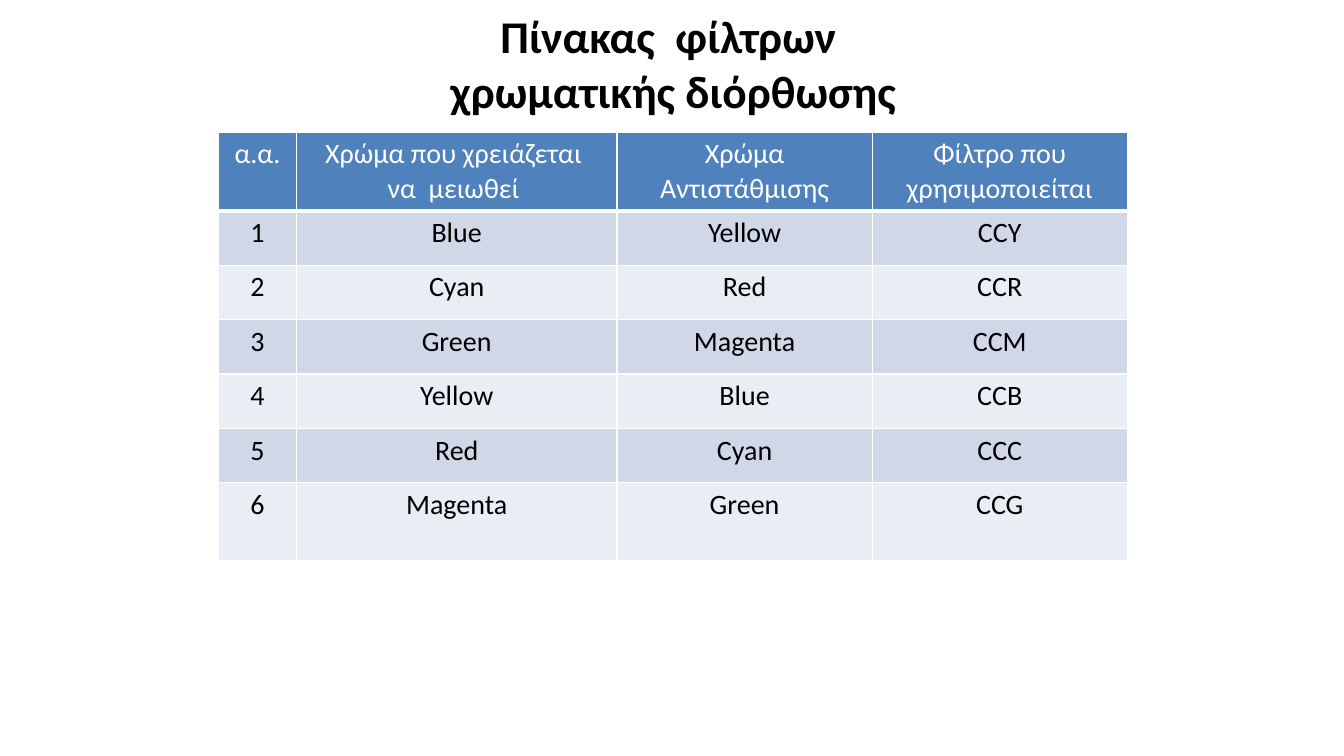
"""Build a slide with a table of colour correction filters."""
from copy import deepcopy

from pptx import Presentation
from pptx.dml.color import RGBColor as RGB
from pptx.enum.text import MSO_ANCHOR as Anchor, PP_ALIGN as Align
from pptx.oxml import parse_xml
from pptx.oxml.ns import nsdecls, qn
from pptx.util import Cm, Pt

COLORS = {"header": "4F81BD", "odd": "D0D8E8", "even": "E9EDF4",
          "white": "FFFFFF", "black": "000000"}
ROWS = [
    ("α.α.", "Χρώμα που χρειάζεται \nνα  μειωθεί ", "Χρώμα Αντιστάθμισης",
     "Φίλτρο που χρησιμοποιείται"),
    ("1", "Blue", "Yellow", "CCY"),
    ("2", "Cyan", "Red", "CCR"),
    ("3", "Green", "Magenta", "CCM"),
    ("4", "Yellow", "Blue", "CCB"),
    ("5", "Red", "Cyan", "CCC"),
    ("6", "Magenta", "Green", "CCG"),
]
COL_WIDTHS = [1.96, 8.08, 6.43, 6.43]
ROW_HEIGHTS = [1.97] + [1.37] * 5 + [1.97]


def write_text(tf, text, size=20, color="black", bold=False):
    tf.text = text
    for p in tf.paragraphs:
        p.alignment = Align.CENTER
        for r in p.runs:
            r.font.name = "Calibri"
            r.font.size = Pt(size)
            r.font.bold = bold
            r.font.color.rgb = RGB.from_string(COLORS[color])
        for br in p._p.findall(qn("a:br")):
            br.insert(0, deepcopy(p.runs[0]._r.rPr))


def add_borders(cell, bottom):
    tc_pr = cell._tc.get_or_add_tcPr()
    for side, width in (("L", 1), ("R", 1), ("T", 1), ("B", bottom)):
        tc_pr.append(parse_xml(
            f'<a:ln{side} {nsdecls("a")} w="{Pt(width)}"><a:solidFill>'
            f'<a:srgbClr val="{COLORS["white"]}"/></a:solidFill></a:ln{side}>'))


prs = Presentation()
prs.slide_width, prs.slide_height = Cm(33.87), Cm(19.05)
s = prs.slides.add_slide(prs.slide_layouts[5])

title = s.shapes.title
title.left, title.top = Cm(1.73), Cm(0.33)
title.width, title.height = Cm(30.48), Cm(2.51)
title.text_frame.vertical_anchor = Anchor.MIDDLE
write_text(title.text_frame, "Πίνακας  φίλτρων \vχρωματικής διόρθωσης",
           size=32.4, bold=True)

table = s.shapes.add_table(len(ROWS), len(COL_WIDTHS), Cm(5.51), Cm(3.33),
                           Cm(sum(COL_WIDTHS)), Cm(sum(ROW_HEIGHTS))).table
for column, width in zip(table.columns, COL_WIDTHS):
    column.width = Cm(width)
for i, (row, height, texts) in enumerate(zip(table.rows, ROW_HEIGHTS, ROWS)):
    row.height = Cm(height)
    is_header = i == 0
    fill = "header" if is_header else "odd" if i % 2 else "even"
    for cell, text in zip(row.cells, texts):
        add_borders(cell, bottom=3 if is_header else 1)
        cell.fill.solid()
        cell.fill.fore_color.rgb = RGB.from_string(COLORS[fill])
        write_text(cell.text_frame, text,
                   color="white" if is_header else "black")

prs.save("out.pptx")
